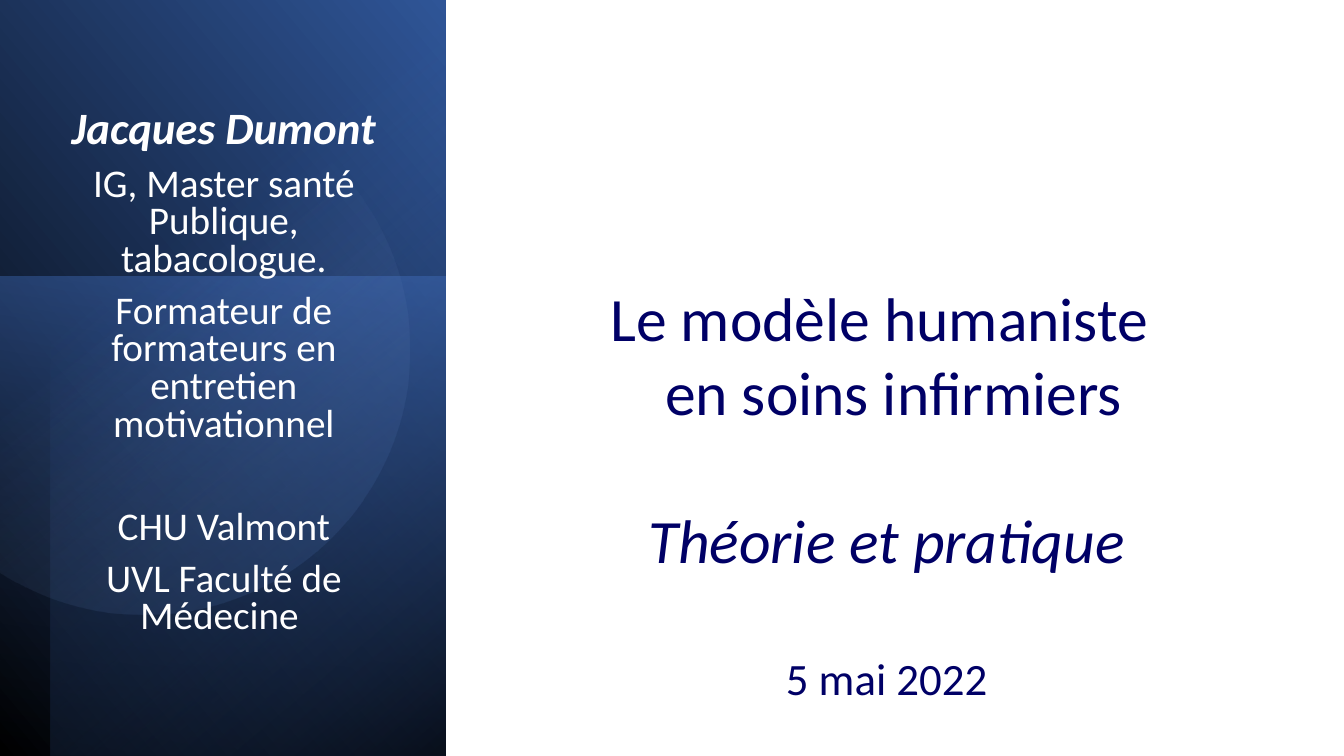
import math

import pptx
import pptx.dml.color
import pptx.enum.shapes
import pptx.enum.text
import pptx.util
from lxml import etree
from pptx.oxml.ns import qn

RGB = pptx.dml.color.RGBColor
BLACK = RGB(0x00, 0x00, 0x00)
WHITE = RGB(0xFF, 0xFF, 0xFF)
NAVY = RGB(0x00, 0x00, 0x66)
DEEP_BLUE = RGB(0x20, 0x38, 0x64)
DARK_BLUE = RGB(0x2F, 0x55, 0x97)
MID_BLUE = RGB(0x44, 0x72, 0xC4)
PALE_BLUE = RGB(0x8F, 0xAA, 0xDC)

FONT = "Calibri"
SLIDE_W, SLIDE_H = 13.33, 7.5
PANEL_W = 4.42
Inches, Pt = pptx.util.Inches, pptx.util.Pt


def gradient(sp, angle, stops):
    """Fill with (position, colour, opacity) stops, in percent."""
    sp.shadow.inherit = False
    sp.line.fill.background()
    sp.fill.gradient()
    grad = sp.fill._xPr.find(qn("a:gradFill"))
    for child in list(grad):
        grad.remove(child)
    grad.set("rotWithShape", "1")
    gs_list = etree.SubElement(grad, qn("a:gsLst"))
    for pos, color, opacity in stops:
        gs = etree.SubElement(gs_list, qn("a:gs"), pos=str(pos * 1000))
        clr = etree.SubElement(gs, qn("a:srgbClr"), val=str(color))
        etree.SubElement(clr, qn("a:alpha"), val=str(opacity * 1000))
    etree.SubElement(grad, qn("a:lin"), ang=str(angle * 60000), scaled="0")


def turned_panel(slide, box, rotation, flip, angle, stops):
    """Rectangle on a quarter turn that covers the given box."""
    x, y, w, h = box
    sp = slide.shapes.add_shape(
        pptx.enum.shapes.MSO_SHAPE.RECTANGLE,
        Inches(x + (w - h) / 2), Inches(y + (h - w) / 2), Inches(h), Inches(w))
    sp.rotation = rotation
    if flip:
        sp.element.spPr.find(qn("a:xfrm")).set("flipH", "1")
    gradient(sp, angle, stops)


def cut_circle(slide, cx, cy, radius, steps=120):
    """Circle cut off by the left edge of the slide."""
    half = math.acos(-cx / radius)
    angles = [half * (2 * i / steps - 1) for i in range(steps + 1)]
    points = [(Inches(cx + radius * math.cos(a)), Inches(cy + radius * math.sin(a)))
              for a in angles]
    builder = slide.shapes.build_freeform(*points[0])
    builder.add_line_segments(points[1:], close=True)
    gradient(builder.convert_to_shape(), 52,
             [(39, PALE_BLUE, 0), (100, DARK_BLUE, 26)])


def side_panel(slide, w, h):
    turned_panel(slide, (0, 0, w, h), 90, True, 310,
                 [(0, BLACK, 100), (100, DARK_BLUE, 100)])
    glow_top = 2.74
    turned_panel(slide, (0, glow_top, w, h - glow_top), 270, False, 190,
                 [(0, MID_BLUE, 50), (100, DEEP_BLUE, 0)])
    shade_left = 0.5
    turned_panel(slide, (shade_left, 0, w - shade_left, h), 270, True, 220,
                 [(0, BLACK, 59), (69, MID_BLUE, 0)])
    cut_circle(slide, 1.43, 3.47, 2.63)


def write_text(sp, box, color, lines, spacing=1.0, wrap=True):
    """Centred lines: (text, size, space before, bold, italic)."""
    sp.left, sp.top, sp.width, sp.height = [Inches(v) for v in box]
    tf = sp.text_frame
    tf.word_wrap = wrap
    tf.auto_size = pptx.enum.text.MSO_AUTO_SIZE.NONE
    tf.vertical_anchor = pptx.enum.text.MSO_ANCHOR.TOP
    for i, (text, size, before, bold, italic) in enumerate(lines):
        p = tf.add_paragraph() if i else tf.paragraphs[0]
        p.alignment = pptx.enum.text.PP_ALIGN.CENTER
        p.line_spacing = spacing
        p.space_before = Pt(before)
        r = p.add_run()
        r.text = text
        r.font.name, r.font.size = FONT, Pt(size)
        r.font.bold, r.font.italic = bold, italic
        r.font.color.rgb = color


def main():
    prs = pptx.Presentation()
    prs.slide_width, prs.slide_height = Inches(SLIDE_W), Inches(SLIDE_H)
    slide = prs.slides.add_slide(prs.slide_layouts[0])
    title, speaker = slide.placeholders[0], slide.placeholders[1]

    # Blue side panel, with the speaker's text in front of it
    side_panel(slide, PANEL_W, SLIDE_H)
    slide.shapes._spTree.append(speaker.element)
    write_text(speaker, (0.45, 1.04, 3.54, 5.53), WHITE, [
        ("Jacques Dumont", 32, 10, True, True),
        ("IG, Master santé Publique, tabacologue.", 28, 10, False, False),
        ("Formateur de formateurs en entretien motivationnel", 28, 10, False, False),
        ("CHU Valmont", 28, 47, False, False),
        ("UVL Faculté de Médecine ", 28, 10, False, False),
    ], spacing=0.8)

    # Title, subtitle and date
    write_text(title, (5.93, 2.73, 5.73, 4.34), NAVY, [
        ("Le modèle humaniste ", 44, 0, False, False),
        (" en soins infirmiers", 44, 0, False, False),
        ("Théorie et pratique", 44, 53, False, True),
        ("5 mai 2022", 32, 53, False, False),
    ], wrap=False)

    prs.save("out.pptx")


if __name__ == "__main__":
    main()
